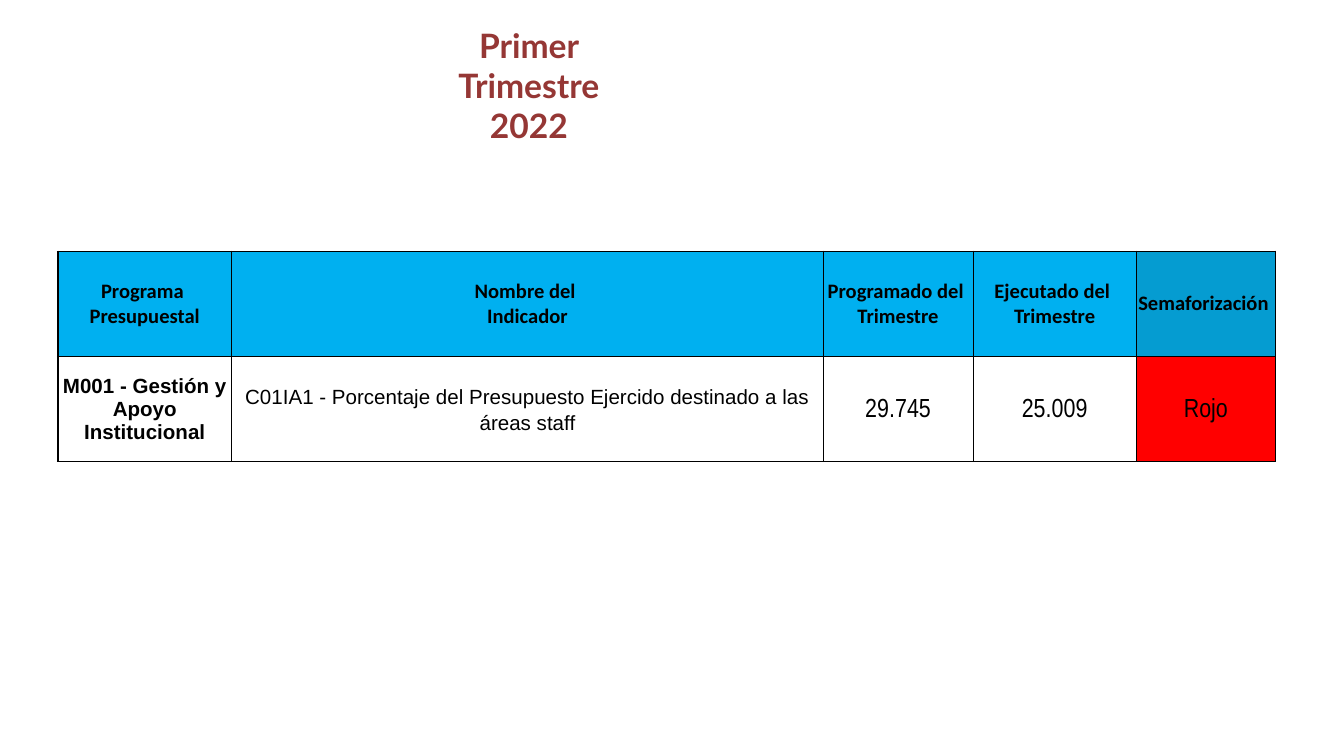
from lxml import etree
from pptx import Presentation, util as u
from pptx.dml.color import RGBColor
from pptx.enum import text
from pptx.oxml import ns

PX = 4572  # 200 px to the inch
BLACK = RGBColor(0, 0, 0)
WINE = RGBColor(0x95, 0x37, 0x35)
SKY = RGBColor(0x00, 0xB0, 0xF0)
TEAL = RGBColor(0x05, 0x9C, 0xD1)
RED = RGBColor(0xFF, 0, 0)

COLS = [259, 880, 223, 243, 207]
HEADS = ["Programa \nPresupuestal", "Nombre del \nIndicador",
         "Programado del \nTrimestre", "Ejecutado del \nTrimestre",
         "Semaforización "]
# text, font, size, bold, line spacing, margins (left, top, right, bottom)
WIDE = (10, 0, 10, 0)
BODY = [
    ("M001 - Gestión y Apoyo Institucional", "Arial", 11, True, None, (2, 2, 2, 0)),
    ("C01IA1 - Porcentaje del Presupuesto Ejercido destinado a las áreas staff",
     "Arial", 11, False, 1.15, WIDE),
] + [(word, "Arial Narrow", 14, False, 1.15, WIDE)
     for word in ("29.745", "25.009", "Rojo")]


def px(n):
    return u.Emu(n * PX)


def write(frame, words, face, size, bold, color, space=None):
    frame.text = words
    for par in frame.paragraphs:
        par.alignment = text.PP_ALIGN.CENTER
        if space:
            par.line_spacing = space
        for run in par.runs:
            font = run.font
            font.name, font.size, font.bold = face, u.Pt(size), bold
            font.color.rgb = color


def edge(cell, side, width):
    line = etree.SubElement(cell._tc.get_or_add_tcPr(), ns.qn("a:ln" + side),
                            w=str(u.Pt(width)))
    fill = etree.SubElement(line, ns.qn("a:solidFill"))
    etree.SubElement(fill, ns.qn("a:srgbClr"), val=str(BLACK))


def style(cell, row, col, fill, pads):
    cell.vertical_anchor = text.MSO_ANCHOR.MIDDLE
    (cell.margin_left, cell.margin_top,
     cell.margin_right, cell.margin_bottom) = map(px, pads)
    # Left and top outer edges are heavier
    edge(cell, "L", 1 if col == 0 else 0.5)
    edge(cell, "R", 0.5)
    edge(cell, "T", 1 if row == 0 else 0.5)
    edge(cell, "B", 0.5)
    if fill is None:
        cell.fill.background()
    else:
        cell.fill.solid()
        cell.fill.fore_color.rgb = fill


def add_title(slide, x, y, w, h):
    box = slide.shapes.add_textbox(px(x), px(y), px(w), px(h))
    frame = box.text_frame
    frame.word_wrap = True
    frame.auto_size = text.MSO_AUTO_SIZE.SHAPE_TO_FIT_TEXT
    write(frame, "Primer Trimestre 2022", "Lato", 18, True, WINE)


def add_grid(slide, x, y, w, h):
    grid = slide.shapes.add_table(2, len(COLS), px(x), px(y), px(w), px(h)).table
    for col, wide in zip(grid.columns, COLS):
        col.width = px(wide)
    last = len(COLS) - 1
    # Header row
    for i, head in enumerate(HEADS):
        cell = grid.cell(0, i)
        write(cell.text_frame, head, "Calibri", 11, True, BLACK)
        style(cell, 0, i, TEAL if i == last else SKY, (0, 0, 0, 0))
    # Indicator row
    for i, (words, face, size, bold, space, pads) in enumerate(BODY):
        cell = grid.cell(1, i)
        write(cell.text_frame, words, face, size, bold, BLACK, space)
        style(cell, 1, i, RED if i == last else None, pads)


def main():
    deck = Presentation()
    deck.slide_width, deck.slide_height = px(2000), px(1125)
    slide = deck.slides.add_slide(deck.slide_layouts[6])
    add_grid(slide, 86, 374, sum(COLS), 312)
    add_title(slide, 622, 27, 330, 202)
    deck.save("out.pptx")


if __name__ == "__main__":
    main()
